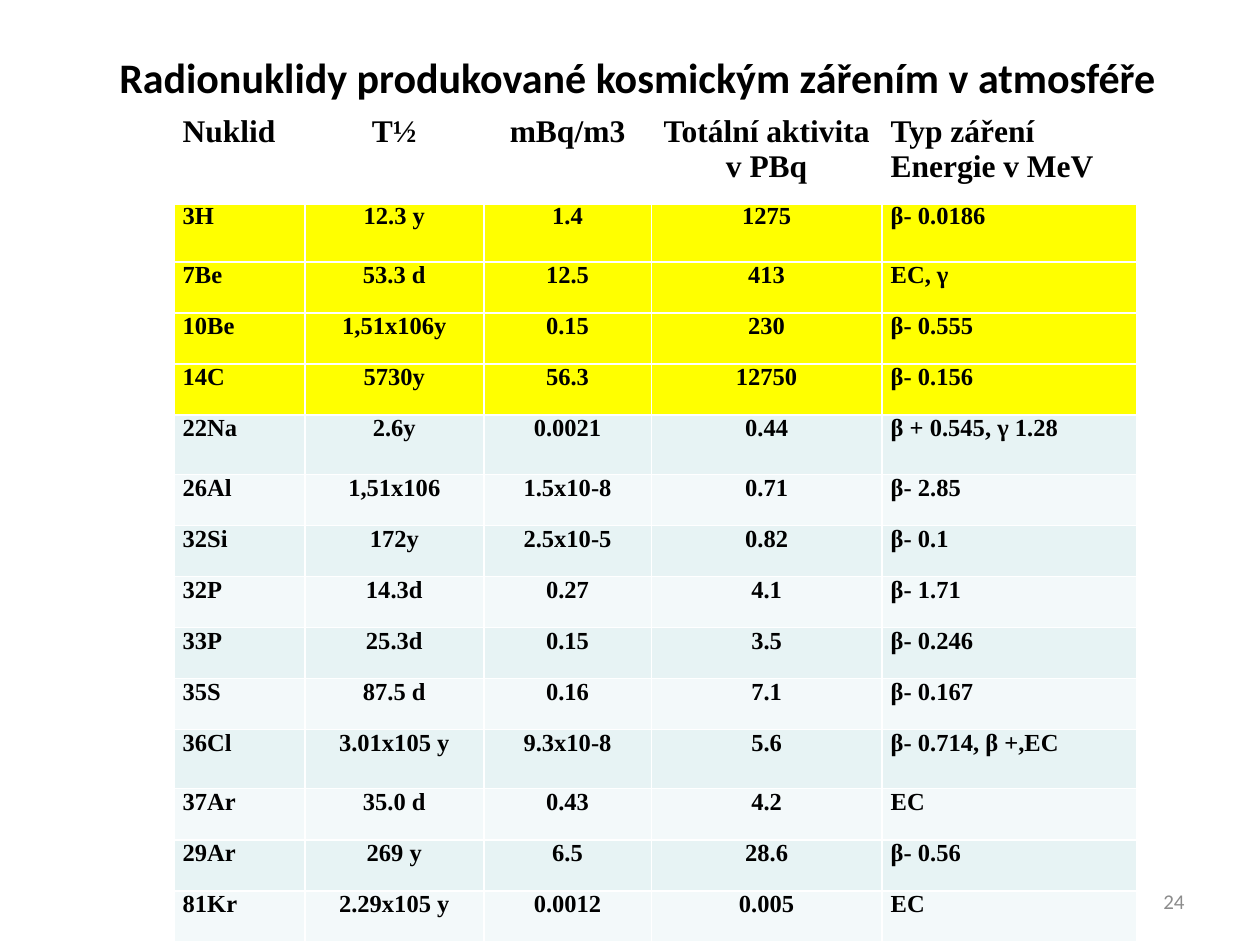
from lxml.etree import SubElement
from pptx import Presentation
from pptx.dml.color import RGBColor
from pptx.enum.text import MSO_ANCHOR, MSO_AUTO_SIZE, PP_ALIGN as Align
from pptx.oxml.ns import qn
from pptx.util import Inches, Pt

BLACK = RGBColor(0x00, 0x00, 0x00)
WHITE = RGBColor(0xFF, 0xFF, 0xFF)
GREY = RGBColor(0x8C, 0x8C, 0x8C)
YELLOW = RGBColor(0xFF, 0xFF, 0x00)
BANDS = (RGBColor(0xE7, 0xF3, 0xF4), RGBColor(0xF3, 0xF9, 0xFA))

HEADINGS = ("Nuklid", "T½", "mBq/m3", "Totální aktivita v PBq",
            "Typ záření \nEnergie v MeV")
NUCLIDES = (
    ("3H", "12.3 y", "1.4", "1275", "β- 0.0186"),
    ("7Be", "53.3 d", "12.5", "413", "EC, γ"),
    ("10Be", "1,51x106y", "0.15", "230", "β- 0.555"),
    ("14C", "5730y", "56.3", "12750", "β- 0.156"),
    ("22Na", "2.6y", "0.0021", "0.44", "β + 0.545, γ 1.28"),
    ("26Al", "1,51x106", "1.5x10-8", "0.71", "β- 2.85"),
    ("32Si", "172y", "2.5x10-5", "0.82", "β- 0.1"),
    ("32P", "14.3d", "0.27", "4.1", "β- 1.71"),
    ("33P", "25.3d", "0.15", "3.5", "β- 0.246"),
    ("35S", "87.5 d", "0.16", "7.1", "β- 0.167"),
    ("36Cl", "3.01x105 y", "9.3x10-8", "5.6", "β- 0.714, β +,EC"),
    ("37Ar", "35.0 d", "0.43", "4.2", "EC"),
    ("29Ar", "269 y", "6.5", "28.6", "β- 0.56"),
    ("81Kr", "2.29x105 y", "0.0012", "0.005", "EC"),
)
HIGHLIGHTED = 4  # the first nuclides, in yellow
COLUMN_WIDTHS = (1.04, 1.42, 1.33, 1.83, 2.02)
COLUMN_ALIGNS = (Align.LEFT, Align.CENTER, Align.CENTER, Align.CENTER, Align.LEFT)
HEADER_HEIGHT, TALL_HEIGHT, TALL_ROWS = 0.7, 0.47, (1, 5, 11)


def format_text(text_frame, align, font_name, size, color, bold=False):
    for paragraph in text_frame.paragraphs:
        paragraph.alignment = align
        for run in paragraph.runs:
            font = run.font
            font.name, font.size, font.bold = font_name, Pt(size), bold
            font.color.rgb = color


def place(shape, box):
    shape.left, shape.top, shape.width, shape.height = map(Inches, box)


def add_title(slide, box):
    title = slide.shapes.title
    place(title, box)
    title.text_frame.text = "Radionuklidy produkované kosmickým zářením v atmosféře"
    title.text_frame.vertical_anchor = MSO_ANCHOR.MIDDLE
    title.text_frame.auto_size = MSO_AUTO_SIZE.NONE
    format_text(title.text_frame, Align.CENTER, "Calibri", 24, BLACK, bold=True)


def set_borders(cell, top, bottom):
    """Draw white cell borders; the side borders are 1 pt wide."""
    properties = cell._tc.get_or_add_tcPr()
    for index, (side, width) in enumerate(
            (("L", 1), ("R", 1), ("T", top), ("B", bottom))):
        line = properties.makeelement(qn(f"a:ln{side}"), {"w": str(Pt(width))})
        fill = SubElement(line, qn("a:solidFill"))
        SubElement(fill, qn("a:srgbClr"), val=str(WHITE))
        properties.insert(index, line)


def row_fill(row):
    if row == 0:
        return WHITE
    return YELLOW if row <= HIGHLIGHTED else BANDS[(row - 1) % 2]


def fill_cell(cell, text, row, column):
    cell.text_frame.text = text
    cell.margin_left = cell.margin_right = Inches(0.07)
    cell.margin_top = cell.margin_bottom = 0
    align = COLUMN_ALIGNS[column]
    if row == 0 and column == len(HEADINGS) - 1:
        align = Align.JUSTIFY
    format_text(cell.text_frame, align, "Times New Roman",
                14 if row else 18, BLACK, bold=True)
    cell.fill.solid()
    cell.fill.fore_color.rgb = row_fill(row)
    set_borders(cell, top=3 if row == 1 else 1, bottom=1 if row else 3)


def add_nuclide_table(slide, box):
    rows = (HEADINGS, *NUCLIDES)
    table = slide.shapes.add_table(
        len(rows), len(HEADINGS), *map(Inches, box)).table
    for column, width in zip(table.columns, COLUMN_WIDTHS):
        column.width = Inches(width)

    # Normal rows share the height left by the header and the tall rows
    left_over = box[3] - HEADER_HEIGHT - TALL_HEIGHT * len(TALL_ROWS)
    normal_height = left_over / (len(NUCLIDES) - len(TALL_ROWS))
    for row, texts in enumerate(rows):
        height = TALL_HEIGHT if row in TALL_ROWS else normal_height
        table.rows[row].height = Inches(height if row else HEADER_HEIGHT)
        for column, text in enumerate(texts):
            fill_cell(table.cell(row, column), text, row, column)


def add_slide_number(slide, box):
    text_frame = slide.shapes.add_textbox(*map(Inches, box)).text_frame
    text_frame.word_wrap = True
    text_frame.vertical_anchor = MSO_ANCHOR.MIDDLE
    text_frame.text = "24"
    format_text(text_frame, Align.RIGHT, "Calibri", 12, GREY)


def main():
    presentation = Presentation()
    presentation.slide_width, presentation.slide_height = Inches(10), Inches(7.5)
    slide = presentation.slides.add_slide(presentation.slide_layouts[5])
    add_title(slide, (0.12, 0.3, 9.88, 0.62))
    add_nuclide_table(slide, (1.38, 0.91, sum(COLUMN_WIDTHS), 6.57))
    add_slide_number(slide, (7.17, 6.95, 2.33, 0.4))
    presentation.save("out.pptx")


if __name__ == "__main__":
    main()
